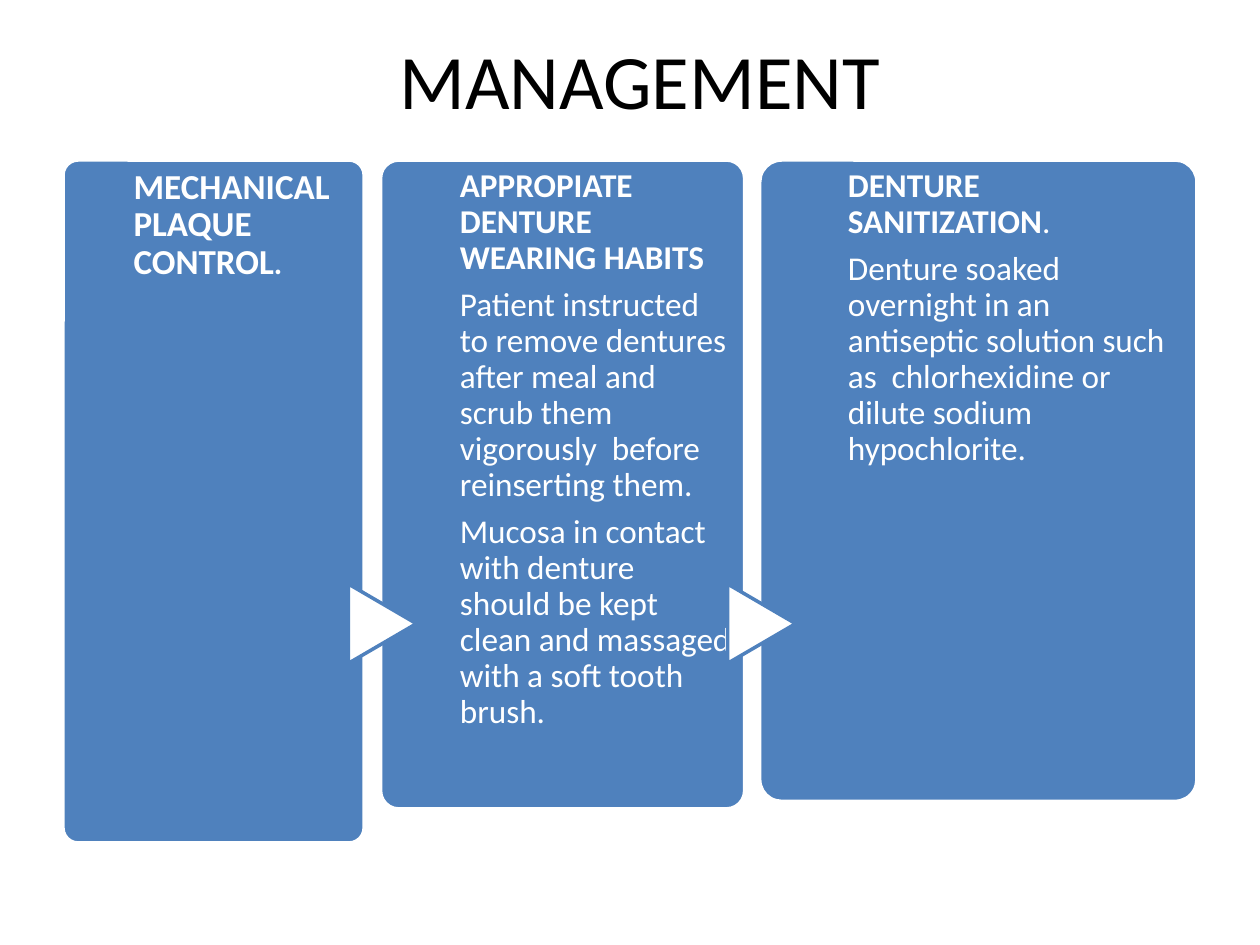
from pptx import Presentation
from pptx import util as u
from pptx.dml import color
from pptx.enum import shapes, text

BLUE, WHITE, BLACK = "4F81BD", "FFFFFF", "000000"
FONT = "Calibri"
PANEL_TOP = 1.27
ARROW_WIDTH, ARROW_HEIGHT, ARROW_CENTER = 0.63, 0.54, 4.95

PANELS = [
    {"box": (0.5, PANEL_TOP, 2.39, 5.42), "indent": 0.56, "text_width": 1.78,
     "paragraphs": [[("MECHANICAL PLAQUE CONTROL", 20, True), (".", 18, True)]]},
    {"box": (3.02, PANEL_TOP, 2.89, 5.15), "indent": 0.63, "text_width": 2.15,
     "paragraphs": [
         [("APPROPIATE DENTURE WEARING HABITS", 19, True)],
         [("Patient instructed to remove dentures after meal and scrub them "
           "vigorously  before reinserting them.", 19, False)],
         [("Mucosa in contact with denture should be kept clean and massaged "
           "with a soft tooth brush.", 19, False)]]},
    {"box": (6.03, PANEL_TOP, 3.47, 5.09), "indent": 0.7, "text_width": 2.58,
     "paragraphs": [
         [("DENTURE SANITIZATION", 19, True), (".", 19, False)],
         [("Denture soaked overnight in an antiseptic solution such as  "
           "chlorhexidine or dilute sodium hypochlorite.", 19, False)]]},
]


def rgb(value):
    return color.RGBColor.from_string(value)


def inches(box):
    return [u.Inches(length) for length in box]


def format_run(run, size, bold, font_color):
    run.font.name = FONT
    run.font.size = u.Pt(size)
    run.font.bold = bold
    run.font.color.rgb = rgb(font_color)


def add_filled_shape(slide, kind, box, fill, line):
    shape = slide.shapes.add_shape(kind, *inches(box))
    shape.shadow.inherit = False
    shape.fill.solid()
    shape.fill.fore_color.rgb = rgb(fill)
    shape.line.color.rgb = rgb(line)
    shape.line.width = u.Pt(2)
    return shape


def add_title(slide, box, wording):
    title = slide.shapes.title
    title.left, title.top, title.width, title.height = inches(box)
    frame = title.text_frame
    frame.text = wording
    frame.vertical_anchor = text.MSO_ANCHOR.MIDDLE
    paragraph = frame.paragraphs[0]
    paragraph.alignment = text.PP_ALIGN.CENTER
    format_run(paragraph.runs[0], 44, False, BLACK)


def add_arrow(slide, panel_left):
    box = (panel_left - 0.3, ARROW_CENTER - ARROW_HEIGHT / 2, ARROW_WIDTH, ARROW_HEIGHT)
    arrow = add_filled_shape(
        slide, shapes.MSO_SHAPE.FLOWCHART_EXTRACT, box, WHITE, BLUE)
    arrow.rotation = 90


def add_panel_text(slide, box, paragraphs):
    frame = slide.shapes.add_textbox(*inches(box)).text_frame
    frame.word_wrap = True
    frame.margin_left = frame.margin_right = frame.margin_bottom = 0
    frame.margin_top = u.Inches(0.07)
    for index, runs in enumerate(paragraphs):
        paragraph = frame.add_paragraph() if index else frame.paragraphs[0]
        paragraph.line_spacing = 0.9
        paragraph.space_after = u.Pt(6.5)
        for wording, size, bold in runs:
            run = paragraph.add_run()
            run.text = wording
            format_run(run, size, bold, WHITE)


def add_panel(slide, box, indent, text_width, paragraphs, has_arrow):
    left, top, width, height = box
    panel = add_filled_shape(
        slide, shapes.MSO_SHAPE.ROUNDED_RECTANGLE, box, BLUE, WHITE)
    panel.adjustments[0] = 0.05
    if has_arrow:
        add_arrow(slide, left)
    add_panel_text(slide, (left + indent, top, text_width, height), paragraphs)


def main():
    presentation = Presentation()
    presentation.slide_width, presentation.slide_height = inches((10, 7.5))
    slide = presentation.slides.add_slide(presentation.slide_layouts[5])
    add_title(slide, (0.58, 0, 9, 1.25), "MANAGEMENT")
    for index, panel in enumerate(PANELS):
        add_panel(slide, **panel, has_arrow=index > 0)
    presentation.save("out.pptx")


if __name__ == "__main__":
    main()
